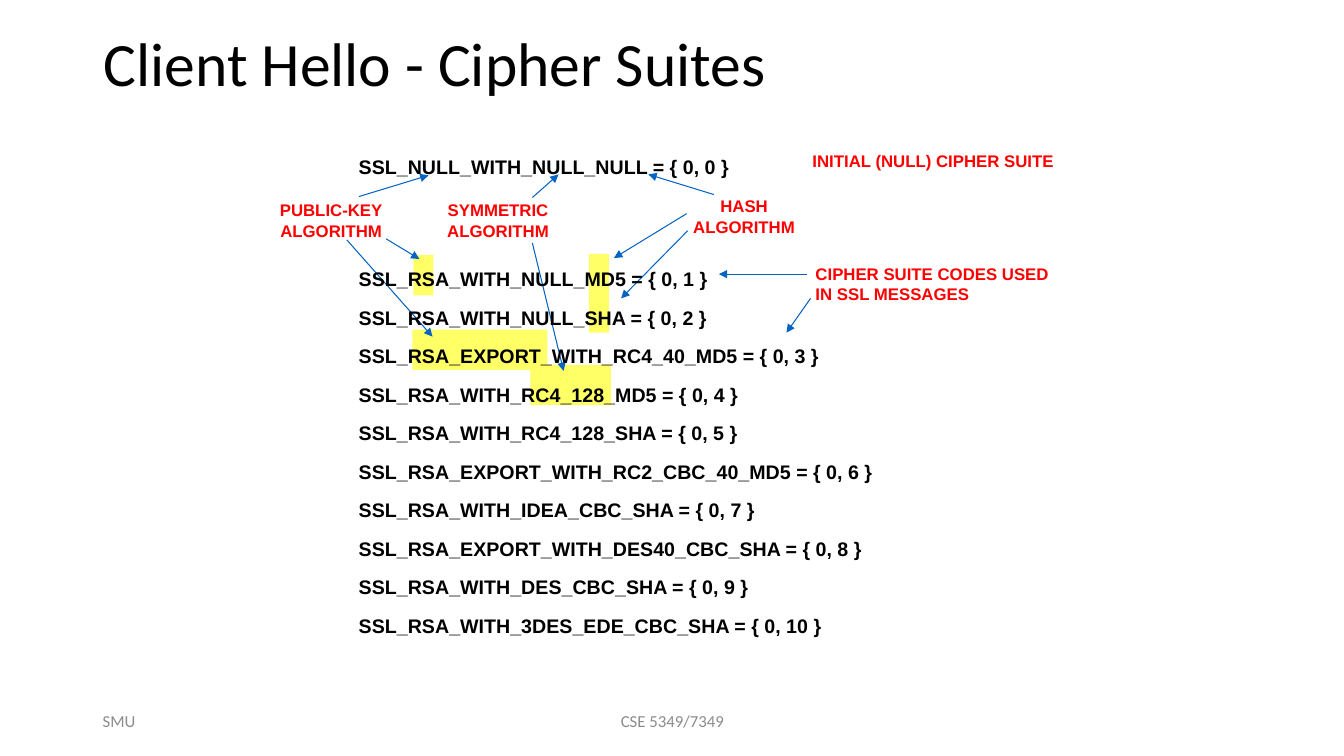
import pptx
import pptx.util
import pptx.dml.color
import pptx.enum.shapes
import pptx.enum.text
import pptx.oxml
import pptx.oxml.ns
from pptx.util import Inches

RGBColor = pptx.dml.color.RGBColor
BLACK = RGBColor(0x00, 0x00, 0x00)
RED = RGBColor(0xFF, 0x00, 0x00)
GRAY = RGBColor(0x8C, 0x8C, 0x8C)
YELLOW = RGBColor(0xFF, 0xFF, 0x66)
BLUE = RGBColor(0x05, 0x63, 0xC1)
ALIGN = pptx.enum.text.PP_ALIGN
ANCHOR = pptx.enum.text.MSO_ANCHOR

HIGHLIGHTS = [
    (5.26, 3.62, 0.8),
    (4.09, 3.27, 1.34),
    (4.1, 2.53, 0.2),
    (5.84, 2.9, 0.2),
    (5.84, 2.52, 0.2),
]
LABELS = [
    ("INITIAL (NULL) CIPHER SUITE", (7.96, 1.45, 2.62, 0.3), ALIGN.LEFT),
    ("PUBLIC-KEY\nALGORITHM", (2.67, 1.93, 1.23, 0.51), ALIGN.CENTER),
    ("SYMMETRIC\nALGORITHM", (4.33, 1.93, 1.22, 0.51), ALIGN.CENTER),
    ("HASH\nALGORITHM", (6.77, 1.89, 1.22, 0.51), ALIGN.CENTER),
    ("CIPHER SUITE CODES USED\nIN SSL MESSAGES", (7.99, 2.56, 2.54, 0.51), ALIGN.LEFT),
]
ARROWS = [
    (3.83, 2.37, 4.16, 2.57),
    (3.44, 2.38, 4.29, 3.34),
    (5.28, 2.41, 5.59, 3.68),
    (6.81, 2.12, 6.09, 2.56),
    (6.82, 2.29, 6.16, 2.96),
    (3.56, 1.95, 4.25, 1.74),
    (5.28, 1.96, 5.54, 1.73),
    (7.08, 1.93, 6.43, 1.73),
    (8, 2.72, 7.13, 2.72),
    (8.04, 2.96, 7.8, 3.3),
]
NULL_SUITE = "SSL_NULL_WITH_NULL_NULL = { 0, 0 }"
SUITES = [
    "SSL_RSA_WITH_NULL_MD5",
    "SSL_RSA_WITH_NULL_SHA",
    "SSL_RSA_EXPORT_WITH_RC4_40_MD5",
    "SSL_RSA_WITH_RC4_128_MD5",
    "SSL_RSA_WITH_RC4_128_SHA",
    "SSL_RSA_EXPORT_WITH_RC2_CBC_40_MD5",
    "SSL_RSA_WITH_IDEA_CBC_SHA",
    "SSL_RSA_EXPORT_WITH_DES40_CBC_SHA",
    "SSL_RSA_WITH_DES_CBC_SHA",
    "SSL_RSA_WITH_3DES_EDE_CBC_SHA",
]


def add_text(slide, text, box, size=12, font="Arial", color=BLACK, bold=False,
             align=ALIGN.LEFT, anchor=ANCHOR.MIDDLE, wrap=True, after=0, spacing=1.0):
    """Add a text box with one paragraph per line of text."""
    frame = slide.shapes.add_textbox(*map(Inches, box)).text_frame
    frame.word_wrap = wrap
    frame.vertical_anchor = anchor
    frame.text = text
    for paragraph in frame.paragraphs:
        paragraph.alignment = align
        paragraph.line_spacing = spacing
        paragraph.space_after = pptx.util.Pt(after)
        paragraph.font.name = font
        paragraph.font.size = pptx.util.Pt(size)
        paragraph.font.bold = bold
        paragraph.font.color.rgb = color


def add_highlight(slide, left, top, width):
    """Add a yellow marker one text line high."""
    shape = slide.shapes.add_shape(
        pptx.enum.shapes.MSO_SHAPE.RECTANGLE,
        Inches(left), Inches(top), Inches(width), Inches(0.4))
    shape.shadow.inherit = False
    shape.fill.solid()
    shape.fill.fore_color.rgb = YELLOW
    shape.line.fill.background()


def add_arrow(slide, *ends):
    """Add a thin blue arrow from its first point to its second."""
    connector = slide.shapes.add_connector(
        pptx.enum.shapes.MSO_CONNECTOR.STRAIGHT, *map(Inches, ends))
    connector.line.color.rgb = BLUE
    connector.line.width = pptx.util.Pt(0.75)
    head = pptx.oxml.parse_xml(
        f'<a:tailEnd {pptx.oxml.ns.nsdecls("a")} type="triangle"/>')
    connector.line._get_or_add_ln().append(head)
    effects = pptx.oxml.parse_xml(f'<a:effectLst {pptx.oxml.ns.nsdecls("a")}/>')
    connector._element.spPr.append(effects)


def main():
    """Build and save the cipher suite slide."""
    presentation = pptx.Presentation()
    presentation.slide_width = Inches(13.33)
    presentation.slide_height = Inches(7.5)
    slide = presentation.slides.add_slide(presentation.slide_layouts[6])

    add_text(slide, "SMU", (0.92, 6.95, 3, 0.4), font="Calibri", color=GRAY)
    add_text(slide, "CSE 5349/7349", (4.42, 6.95, 4.5, 0.4), font="Calibri",
             color=GRAY, align=ALIGN.CENTER)
    for highlight in HIGHLIGHTS:
        add_highlight(slide, *highlight)
    add_text(slide, "Client Hello - Cipher Suites", (0.93, 0.21, 8.5, 0.83), size=44,
             font="Calibri", anchor=ANCHOR.BOTTOM, spacing=0.9)
    for text, box, align in LABELS:
        add_text(slide, text, box, color=RED, bold=True, align=align, wrap=False)
    for arrow in ARROWS:
        add_arrow(slide, *arrow)

    suite_lines = [f"{name} = {{ 0, {code} }}" for code, name in enumerate(SUITES, 1)]
    suite_format = dict(size=14, bold=True, anchor=ANCHOR.TOP, after=10.7)
    add_text(slide, NULL_SUITE, (3.46, 1.49, 5.97, 0.32), **suite_format)
    add_text(slide, "\n".join(suite_lines), (3.46, 2.6, 5.97, 3.7), **suite_format)
    presentation.save("out.pptx")


if __name__ == "__main__":
    main()
